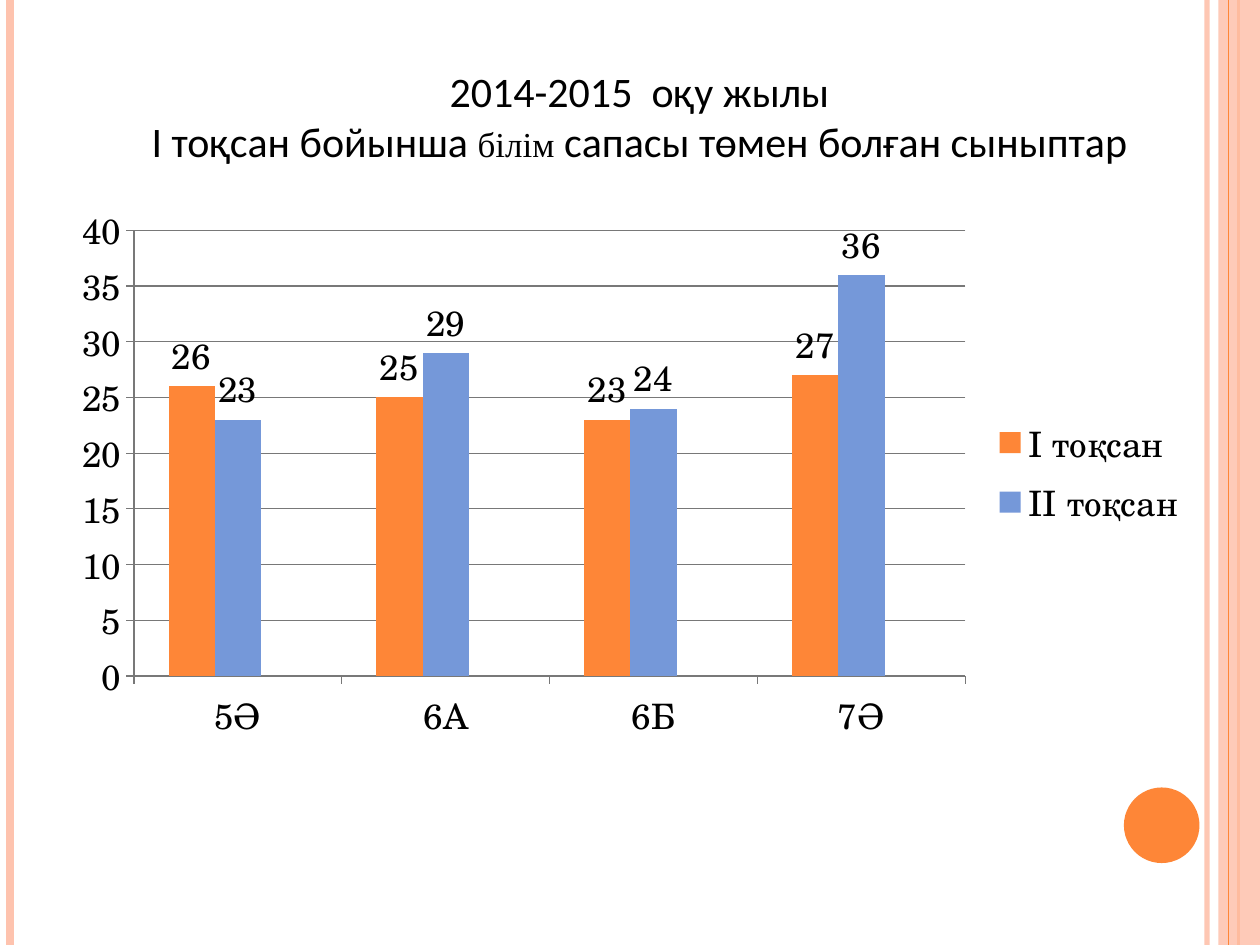
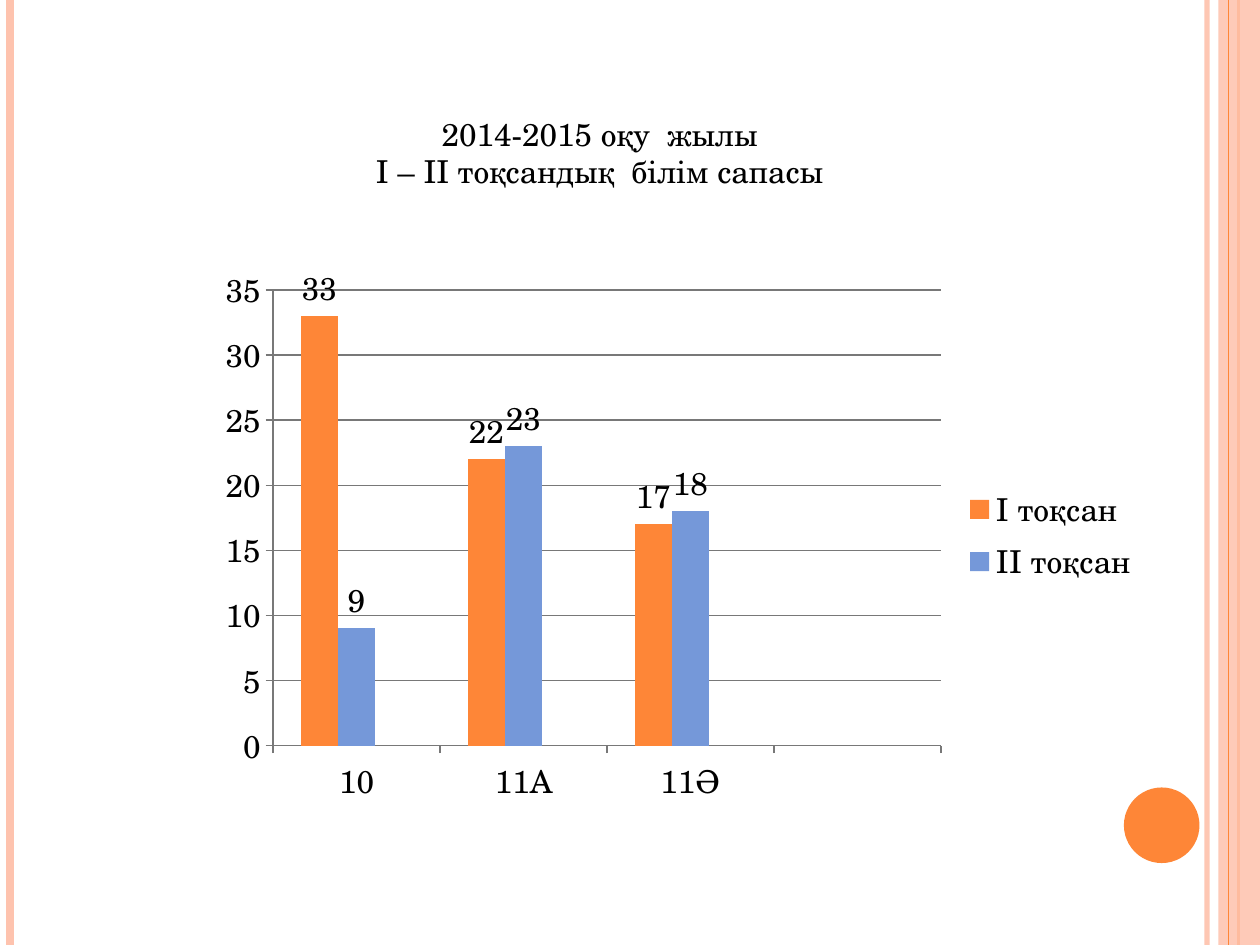
import pptx
import pptx.chart.data
import pptx.dml.color
import pptx.enum.chart
import pptx.enum.shapes
import pptx.enum.text
import pptx.oxml
import pptx.oxml.ns
import pptx.util
from lxml import etree
from pptx.util import Inches

ORANGE, PEACH, BLUE, RED = "FE8637", "FEC3AE", "7598D9", "B32C16"
BLACK, GREY = "000000", "787878"
SERIF = "TeX Gyre Schola"
qn = pptx.oxml.ns.qn


def rgb(code):
    """Turn a hex string into a colour."""
    return pptx.dml.color.RGBColor.from_string(code)


def add_text(p, text, size=18, font=SERIF, color=BLACK):
    """Add a formatted run to a paragraph."""
    r = p.add_run()
    r.text = text
    r.font.size = pptx.util.Pt(size)
    r.font.name = font
    r.font.color.rgb = rgb(color)
    return r


SLIDES = [
    dict(
        title_box=(1.09, 0.47, 7.97, 0.91),
        title=[
            [("2014-2015  оқу жылы", 24, "Calibri")],
            [("І тоқсан бойынша ", 24, "Calibri"),
             ("білім", 20, "Times New Roman"),
             (" сапасы төмен болған сыныптар", 24, "Calibri")],
        ],
        chart_box=(0.47, 1.53, 9.06, 4.44),
        size=20,
        top=40,
        classes=["5Ә", "6А", "6Б", "7Ә"],
        first=[26, 25, 23, 27],
        second=[23, 29, 24, 36],
    ),
    dict(
        title_box=(1.09, 0.86, 7.34, 0.71),
        title=[
            [("2014-2015 оқу  жылы", 18, SERIF)],
            [("І – ІІ тоқсандық  білім сапасы", 18, SERIF)],
        ],
        chart_box=(1.64, 2.03, 7.5, 4.44),
        size=18,
        top=35,
        classes=["10", "11А", "11Ә", ""],
        first=[33, 22, 17, None],
        second=[9, 23, 18, None],
    ),
]

prs = pptx.Presentation()
prs.slide_width, prs.slide_height = Inches(10), Inches(7.5)
layout = prs.slide_layouts[5]
for ph in list(layout.placeholders):
    if ph.placeholder_format.type != pptx.enum.shapes.PP_PLACEHOLDER.TITLE:
        layout.shapes.element.remove(ph.element)
slides = [prs.slides.add_slide(layout) for _ in SLIDES]

# Shared decoration: drawn on the first slide, then moved to the layout
shapes = slides[0].shapes
decor = []
for x, color, width, opacity in [
    (9.58, PEACH, 3, 93),
    (0.08, PEACH, 4.5, 100),
    (9.83, ORANGE, 1.5, 100),
    (9.75, ORANGE, 0.75, 100),
]:
    line = shapes.add_connector(pptx.enum.shapes.MSO_CONNECTOR.STRAIGHT,
                                Inches(x), 0, Inches(x), Inches(7.5))
    line.line.color.rgb = rgb(color)
    line.line.width = pptx.util.Pt(width)
    etree.SubElement(line.element.spPr, qn("a:effectLst"))
    decor.append((line, opacity))

kinds = pptx.enum.shapes.MSO_SHAPE
for kind, box, color, opacity in [
    (kinds.RECTANGLE, (9.67, 0, 0.33, 7.5), PEACH, 87),
    (kinds.OVAL, (8.92, 6.25, 0.6, 0.6), ORANGE, 100),
]:
    sp = shapes.add_shape(kind, *map(Inches, box))
    sp.fill.solid()
    sp.fill.fore_color.rgb = rgb(color)
    sp.line.fill.background()
    sp.shadow.inherit = False
    decor.append((sp, opacity))

# The thin orange line (fourth) lies over the band, so it goes in after it
for i in (0, 1, 2, 4, 3, 5):
    sp, opacity = decor[i]
    if opacity < 100:
        for clr in sp.element.spPr.iter(qn("a:srgbClr")):
            etree.SubElement(clr, qn("a:alpha"), val=str(opacity * 1000))
    layout.shapes.element.append(sp.element)

for s, info in zip(slides, SLIDES):
    # Chart
    data = pptx.chart.data.CategoryChartData()
    data.categories = info["classes"]
    data.add_series("І тоқсан", info["first"])
    data.add_series("ІІ тоқсан", info["second"])
    data.add_series("Series 3", [None] * 4)
    chart = s.shapes.add_chart(
        pptx.enum.chart.XL_CHART_TYPE.COLUMN_CLUSTERED,
        *map(Inches, info["chart_box"]), data).chart
    chart.has_title = False
    chart.font.name = SERIF
    chart.font.size = pptx.util.Pt(info["size"])
    chart.font.color.rgb = rgb(BLACK)

    plot = chart.plots[0]
    plot.vary_by_categories = False
    plot.gap_width = 150
    plot.overlap = 0
    for series, color in zip(plot.series, (ORANGE, BLUE, RED)):
        series.format.fill.solid()
        series.format.fill.fore_color.rgb = rgb(color)
    for series in list(plot.series)[:2]:
        series.data_labels.show_value = True
        series.data_labels.position = (
            pptx.enum.chart.XL_LABEL_POSITION.OUTSIDE_END)

    axis = chart.value_axis
    axis.minimum_scale, axis.maximum_scale = 0, info["top"]
    axis.major_unit = 5
    axis.has_major_gridlines = True
    for part in (axis, chart.category_axis, axis.major_gridlines):
        part.format.line.color.rgb = rgb(GREY)
        part.format.line.width = pptx.util.Pt(0.75)
    for part in (axis, chart.category_axis):
        part.major_tick_mark = pptx.enum.chart.XL_TICK_MARK.OUTSIDE

    chart.has_legend = True
    legend = chart.legend
    legend.position = pptx.enum.chart.XL_LEGEND_POSITION.RIGHT
    legend.include_in_layout = False
    # Hide the legend entry of the empty third series
    entry = etree.Element(qn("c:legendEntry"))
    etree.SubElement(entry, qn("c:idx"), val="2")
    etree.SubElement(entry, qn("c:delete"), val="1")
    chart.element.find(".//" + qn("c:legendPos")).addnext(entry)

    # Title
    title = s.shapes.title
    title.left, title.top, title.width, title.height = map(
        Inches, info["title_box"])
    tf = title.text_frame
    tf.word_wrap = True
    tf.auto_size = pptx.enum.text.MSO_AUTO_SIZE.SHAPE_TO_FIT_TEXT
    tf.vertical_anchor = pptx.enum.text.MSO_ANCHOR.TOP
    for i, runs in enumerate(info["title"]):
        p = tf.add_paragraph() if i else tf.paragraphs[0]
        p.alignment = pptx.enum.text.PP_ALIGN.CENTER
        for text, size, font in runs:
            add_text(p, text, size=size, font=font)

prs.save("out.pptx")
